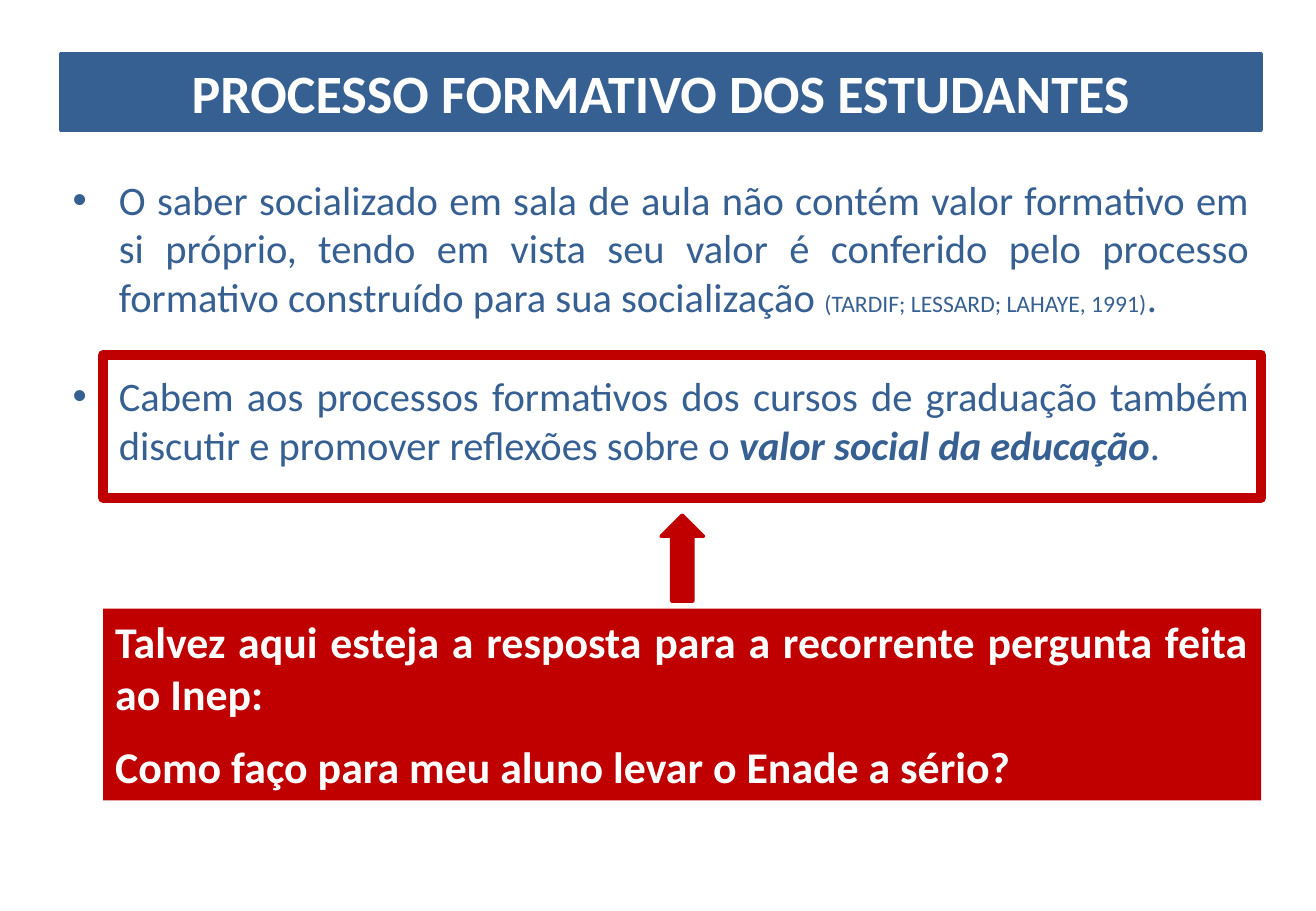
"""Build the slide on the students' formative process."""
from dataclasses import dataclass
from typing import Optional

from lxml.etree import SubElement
from pptx import Presentation
from pptx.dml.color import RGBColor
from pptx.enum.shapes import MSO_SHAPE
from pptx.enum.text import MSO_ANCHOR, MSO_AUTO_SIZE, PP_ALIGN
from pptx.oxml.ns import qn
from pptx.util import Inches, Pt


@dataclass(frozen=True)
class Theme:
    font: str = "Calibri"
    blue: str = "376092"
    red: str = "C00000"
    white: str = "FFFFFF"
    title: float = 32
    call: float = 26
    body: float = 24
    cite: float = 14


@dataclass(frozen=True)
class Box:
    left: float
    top: float
    width: float
    height: float

    def place(self) -> tuple:
        return tuple(map(Inches, (self.left, self.top, self.width, self.height)))


@dataclass(frozen=True)
class Run:
    text: str
    size: Optional[float] = None
    strong: bool = False
    slant: bool = False


@dataclass(frozen=True)
class Block:
    kind: MSO_SHAPE
    box: Box
    fill: Optional[str] = None
    line: Optional[str] = None
    width: float = 0


THEME = Theme()
EDGE, INNER, RIGHT = 0.5, 0.85, 10.38
SPAN = RIGHT - INNER
ARROW = 0.35
HEAD = Box(EDGE, 0.44, RIGHT - EDGE, 0.63)
BODY = Box(EDGE, 1.39, RIGHT - EDGE, 5.12)
FRAME = Block(MSO_SHAPE.RECTANGLE, Box(INNER, 2.92, SPAN, 1.18),
              line=THEME.red, width=6)
CALL = Block(MSO_SHAPE.RECTANGLE, Box(INNER, 5.01, SPAN, 1.58), fill=THEME.red)
POINTER = Block(MSO_SHAPE.UP_ARROW,
                Box(INNER + (SPAN - ARROW) / 2, 4.24, ARROW, 0.71),
                fill=THEME.red, line=THEME.red, width=2)

TITLE = [[Run("PROCESSO FORMATIVO DOS ESTUDANTES")]]
POINTS = [
    [Run("O saber socializado em sala de aula não contém valor formativo em si "
         "próprio, tendo em vista seu valor é conferido pelo processo formativo "
         "construído para sua socialização "),
     Run("(TARDIF; LESSARD; LAHAYE, 1991)", size=THEME.cite),
     Run(".")],
    [Run("Cabem aos processos formativos dos cursos de graduação também discutir "
         "e promover reflexões sobre o "),
     Run("valor social da educação", strong=True, slant=True),
     Run(".")],
]
ANSWER = [
    [Run("Talvez aqui esteja a resposta para a recorrente pergunta feita ao Inep:")],
    [Run("Como faço para meu aluno levar o Enade a sério?")],
]


def paint(shape, fill: Optional[str], line: Optional[str], width: float) -> None:
    if fill:
        shape.fill.solid()
        shape.fill.fore_color.rgb = RGBColor.from_string(fill)
    else:
        shape.fill.background()
    if line:
        shape.line.color.rgb = RGBColor.from_string(line)
        shape.line.width = Pt(width)
        SubElement(shape.line._get_or_add_ln(), qn("a:round"))
    else:
        shape.line.fill.background()


def write(shape, paras: list[list[Run]], *, size: float, color: str,
          align: PP_ALIGN = PP_ALIGN.JUSTIFY, bold: bool = False, gap: float = 0,
          bullet: bool = False, anchor: MSO_ANCHOR = MSO_ANCHOR.TOP) -> None:
    frame = shape.text_frame
    frame.word_wrap = True
    frame.auto_size = MSO_AUTO_SIZE.NONE
    frame.vertical_anchor = anchor
    for index, runs in enumerate(paras):
        para = frame.add_paragraph() if index else frame.paragraphs[0]
        para.alignment = align
        para.space_before = Pt(gap if index else 0)
        if bullet:
            props = para._p.get_or_add_pPr()
            props.set("marL", str(Inches(0.38)))
            props.set("indent", str(-Inches(0.38)))
            tint = SubElement(SubElement(props, qn("a:buClr")), qn("a:srgbClr"))
            tint.set("val", color)
            SubElement(props, qn("a:buFont")).set("typeface", "Arial")
            SubElement(props, qn("a:buChar")).set("char", "•")
        for item in runs:
            run = para.add_run()
            run.text = item.text
            run.font.name = THEME.font
            run.font.size = Pt(item.size or size)
            run.font.bold = bold or item.strong
            run.font.italic = item.slant
            run.font.color.rgb = RGBColor.from_string(color)


def draw(slide, block: Block):
    shape = slide.shapes.add_shape(block.kind, *block.box.place())
    shape.shadow.inherit = False
    paint(shape, block.fill, block.line, block.width)
    return shape


def main() -> None:
    deck = Presentation()
    deck.slide_width, deck.slide_height = Inches(10.83), Inches(7.5)
    slide = deck.slides.add_slide(deck.slide_layouts[5])

    title = slide.shapes.title
    title.left, title.top, title.width, title.height = HEAD.place()
    paint(title, THEME.blue, THEME.blue, 2)
    write(title, TITLE, size=THEME.title, color=THEME.white, bold=True,
          align=PP_ALIGN.CENTER, anchor=MSO_ANCHOR.MIDDLE)

    body = slide.shapes.add_textbox(*BODY.place())
    write(body, POINTS, size=THEME.body, color=THEME.blue, gap=30, bullet=True)

    draw(slide, FRAME)
    write(draw(slide, CALL), ANSWER, size=THEME.call, color=THEME.white,
          bold=True, gap=12)
    draw(slide, POINTER)
    deck.save("out.pptx")


if __name__ == "__main__":
    main()
